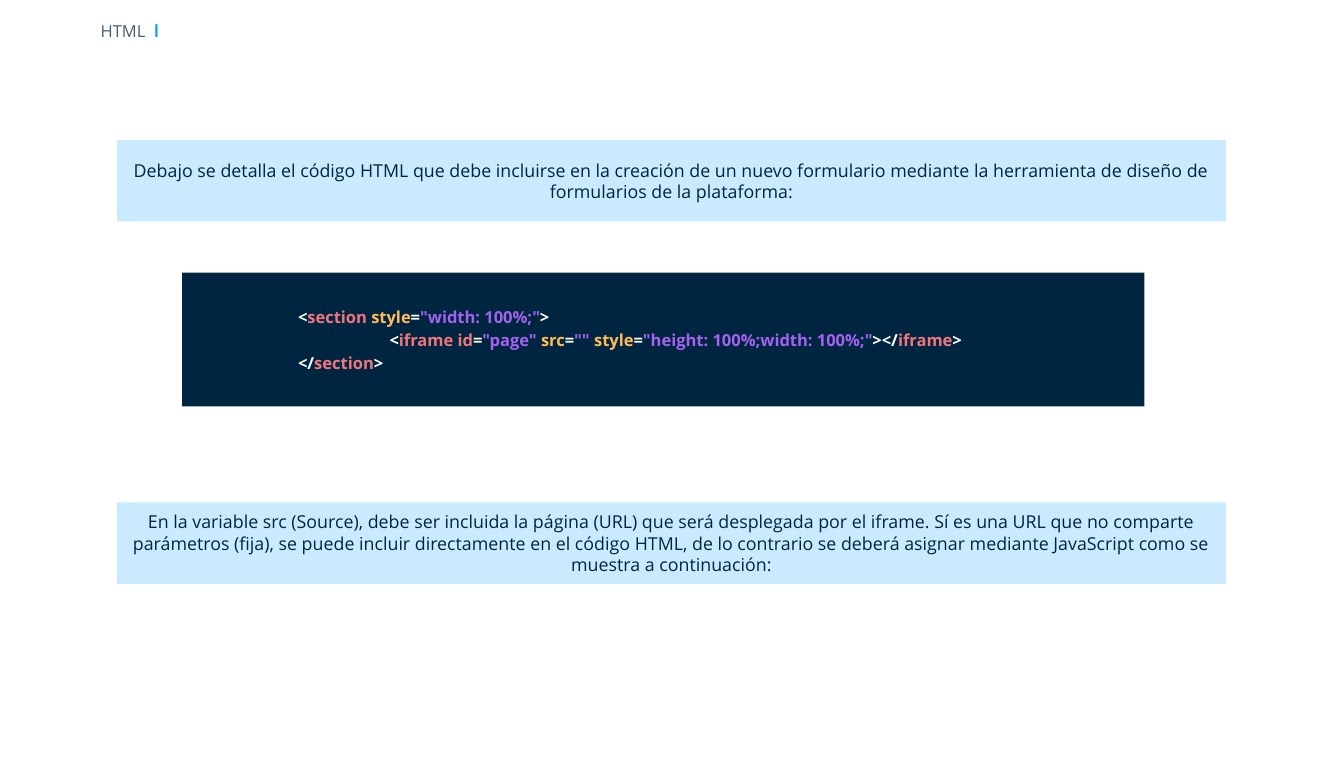
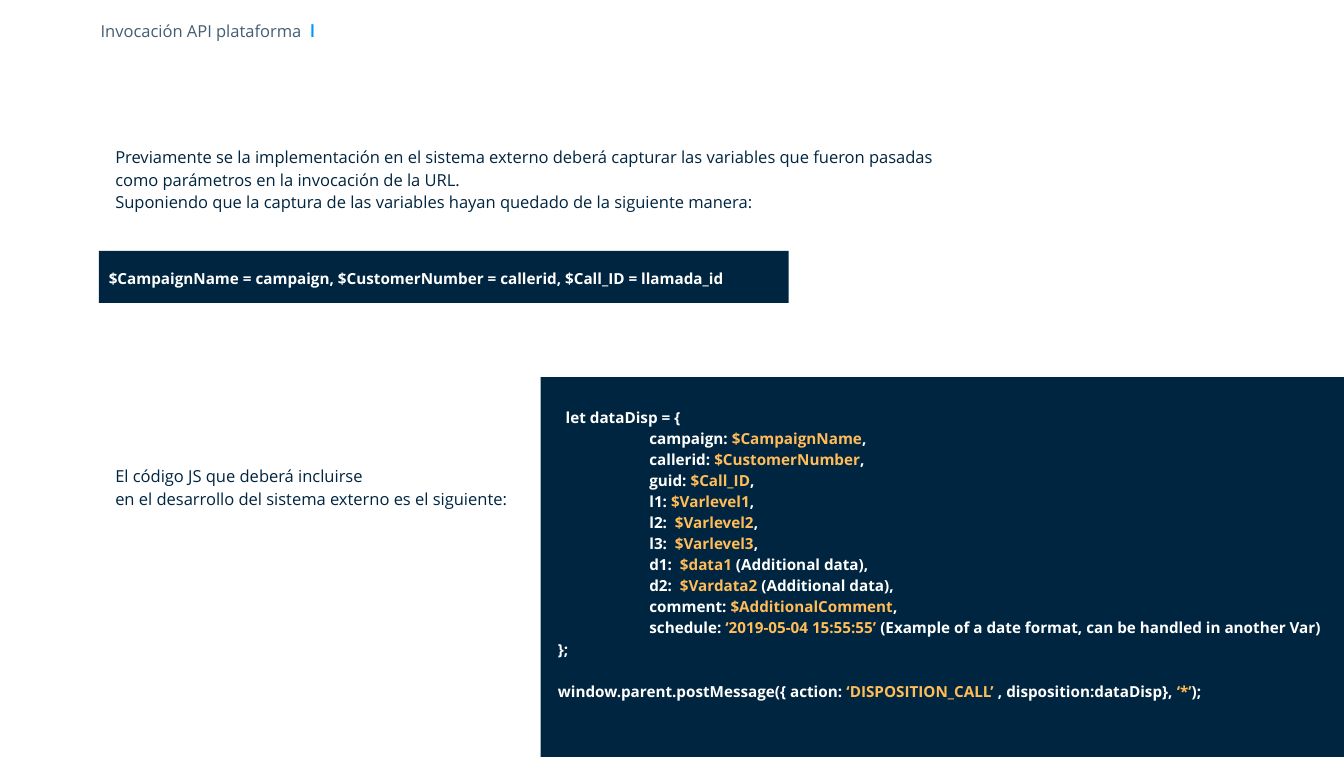
from dataclasses import dataclass

import pptx
import pptx.dml.color
import pptx.enum.shapes
import pptx.enum.text
import pptx.util

MIDDLE = pptx.enum.text.MSO_ANCHOR.MIDDLE
TOP = pptx.enum.text.MSO_ANCHOR.TOP
CENTER = pptx.enum.text.PP_ALIGN.CENTER
LEFT = pptx.enum.text.PP_ALIGN.LEFT


@dataclass(frozen=True)
class Theme:
    width: float = 14.69
    height: float = 8.27
    font: str = "Open Sans"
    bar_font: str = "Manrope"
    navy: str = "002540"
    sky: str = "CCEAFF"
    white: str = "FFFFFF"
    slate: str = "435E72"
    blue: str = "0095FF"
    red: str = "F2757E"
    amber: str = "FFBC58"
    violet: str = "A562F0"
    note_size: int = 14
    body_size: int = 13
    code_size: int = 12
    spacing: float = 1.15


T = Theme()


@dataclass(frozen=True)
class Box:
    """Left, top, width and height in percent of the slide."""
    left: float
    top: float
    width: float
    height: float

    def emu(self) -> list[int]:
        return [pptx.util.Inches(share * side / 100) for share, side in (
            (self.left, T.width), (self.top, T.height),
            (self.width, T.width), (self.height, T.height))]


@dataclass(frozen=True)
class Span:
    text: str
    color: str | None = None
    font: str | None = None
    size: float | None = None
    bold: bool | None = None
    tracking: float = 0


@dataclass(frozen=True)
class Line:
    spans: tuple[Span, ...]
    indent: float = 0
    before: float = 0


def rgb(value: str) -> pptx.dml.color.RGBColor:
    return pptx.dml.color.RGBColor.from_string(value)


def code(*parts: str, indent: float = 0, before: float = 0) -> Line:
    """Makes a code line from alternating colours and texts."""
    spans = tuple(Span(text, color) for color, text in zip(parts[::2], parts[1::2]))
    return Line(spans, indent, before)


def add_panel(s, box: Box, fill: str):
    sp = s.shapes.add_shape(pptx.enum.shapes.MSO_SHAPE.RECTANGLE, *box.emu())
    sp.shadow.inherit = False
    sp.fill.solid()
    sp.fill.fore_color.rgb = rgb(fill)
    sp.line.fill.background()
    return sp


def add_text(s, box: Box, lines: list[str | Line], *, fill: str | None = None,
             size: float = T.body_size, color: str = T.navy, bold: bool = False,
             align=LEFT, anchor=TOP, spacing: float = 1.0,
             margins: tuple[float, float] = (0.1, 0.1)) -> None:
    sp = add_panel(s, box, fill) if fill else s.shapes.add_textbox(*box.emu())
    tf = sp.text_frame
    tf.word_wrap = True
    tf.vertical_anchor = anchor
    tf.margin_left = tf.margin_right = pptx.util.Inches(margins[0])
    tf.margin_top = tf.margin_bottom = pptx.util.Inches(margins[1])
    for i, line in enumerate(lines):
        if isinstance(line, str):
            line = Line((Span(line),))
        p = tf.paragraphs[0] if i == 0 else tf.add_paragraph()
        p.alignment = align
        p.line_spacing = spacing
        if line.before:
            p.space_before = pptx.util.Pt(line.before)
        if line.indent:
            p._p.get_or_add_pPr().set("marL", str(pptx.util.Inches(line.indent)))
        for span in line.spans:
            r = p.add_run()
            r.text = span.text
            r.font.name = span.font or T.font
            r.font.size = pptx.util.Pt(span.size or size)
            r.font.bold = bold if span.bold is None else span.bold
            r.font.color.rgb = rgb(span.color or color)
            if span.tracking:
                r._r.get_or_add_rPr().set("spc", str(round(span.tracking * 100)))


def add_slide(prs, title: str):
    s = prs.slides.add_slide(prs.slide_layouts[6])
    s.background.fill.solid()
    s.background.fill.fore_color.rgb = rgb(T.white)
    heading = Line((Span(title), Span(" ", tracking=3.4),
                    Span("|", T.blue, T.bar_font, 14, True)))
    add_text(s, Box(6.47, 1.21, 37.44, 5.68), [heading], color=T.slate,
             anchor=MIDDLE, margins=(0.15, 0.15))
    return s


def add_code(s, box: Box, lines: list[str | Line], size: float) -> None:
    add_text(s, box, lines, size=size, color=T.white, bold=True, spacing=T.spacing)


def build_html(prs) -> None:
    s = add_slide(prs, "HTML")

    # Notes above and below the code
    notes = (
        (18.5, "Debajo se detalla el código HTML que debe incluirse en la creación de un "
               "nuevo formulario mediante la herramienta de diseño de formularios de "
               "la plataforma:"),
        (66.38, "En la variable src (Source), debe ser incluida la página (URL) que será "
                "desplegada por el iframe. Sí es una URL que no comparte parámetros (fija), "
                "se puede incluir directamente en el código HTML, de lo contrario se deberá "
                "asignar mediante JavaScript como se muestra a continuación:"),
    )
    for top, text in notes:
        add_text(s, Box(8.71, top, 82.51, 10.76), [text], fill=T.sky,
                 size=T.note_size, align=CENTER, anchor=MIDDLE)

    # Markup
    add_panel(s, Box(13.55, 36.03, 71.61, 17.65), T.navy)
    add_code(s, Box(14.7, 38.94, 69.23, 11.12), [
        code(T.white, "<", T.red, "section ", T.amber, "style", T.white, "=",
             T.violet, '"width: 100%;"', T.white, ">", indent=1),
        code(T.white, "<", T.red, "iframe id", T.white, "=", T.violet, '"page" ',
             T.amber, "src", T.white, "=", T.violet, '"" ', T.amber, "style",
             T.white, "=", T.violet, '"height: 100%;width: 100%;"',
             T.white, "></", T.red, "iframe", T.white, ">", indent=2),
        code(T.white, "</", T.red, "section", T.white, ">", indent=1),
    ], T.body_size)


def build_api(prs) -> None:
    s = add_slide(prs, "Invocación API plataforma")

    # Explanations
    explanations = (
        (Box(7.83, 18.26, 62.9, 10.88), [
            "Previamente se la implementación en el sistema externo deberá capturar las "
            "variables que fueron pasadas como parámetros en la invocación de la URL.",
            "Suponiendo que la captura de las variables hayan quedado de la siguiente "
            "manera:"]),
        (Box(7.83, 60.46, 32, 7.26), [
            "El código JS que deberá incluirse",
            "en el desarrollo del sistema externo es el siguiente:"]),
    )
    for box, lines in explanations:
        add_text(s, box, lines, spacing=T.spacing, margins=(0.11, 0.06))

    # Captured variables
    add_text(s, Box(7.35, 33.13, 51.33, 6.89),
             ["$CampaignName = campaign, $CustomerNumber = callerid, $Call_ID = llamada_id"],
             fill=T.navy, size=T.code_size, color=T.white, bold=True,
             anchor=MIDDLE, spacing=T.spacing, margins=(0.11, 0.06))

    # Script
    fields = (
        ("campaign: ", "$CampaignName", ","),
        ("callerid: ", "$CustomerNumber", ","),
        ("guid: ", "$Call_ID", ","),
        ("l1: ", "$Varlevel1", ","),
        ("l2:  ", "$Varlevel2", ","),
        ("l3:  ", "$Varlevel3", ","),
        ("d1:  ", "$data1", " (Additional data),"),
        ("d2:  ", "$Vardata2", " (Additional data),"),
        ("comment: ", "$AdditionalComment", ","),
        ("schedule: ", "‘2019-05-04 15:55:55’",
         " (Example of a date format, can be handled in another Var)"),
    )
    add_panel(s, Box(40.23, 49.82, 59.77, 50.18), T.navy)
    add_code(s, Box(40.84, 52.36, 58.61, 41.48), [
        "  let dataDisp = {",
        *(code(T.white, key, T.amber, value, T.white, tail, indent=1)
          for key, value, tail in fields),
        "};",
        code(T.white, "window.parent.postMessage({ action:",
             T.amber, " ‘DISPOSITION_CALL’ ", T.white, ", disposition:dataDisp}, ",
             T.amber, "‘*’", T.white, ");", before=16.5),
    ], T.code_size)


def main() -> None:
    prs = pptx.Presentation()
    prs.slide_width = pptx.util.Inches(T.width)
    prs.slide_height = pptx.util.Inches(T.height)
    build_html(prs)
    build_api(prs)
    prs.save("out.pptx")


if __name__ == "__main__":
    main()
